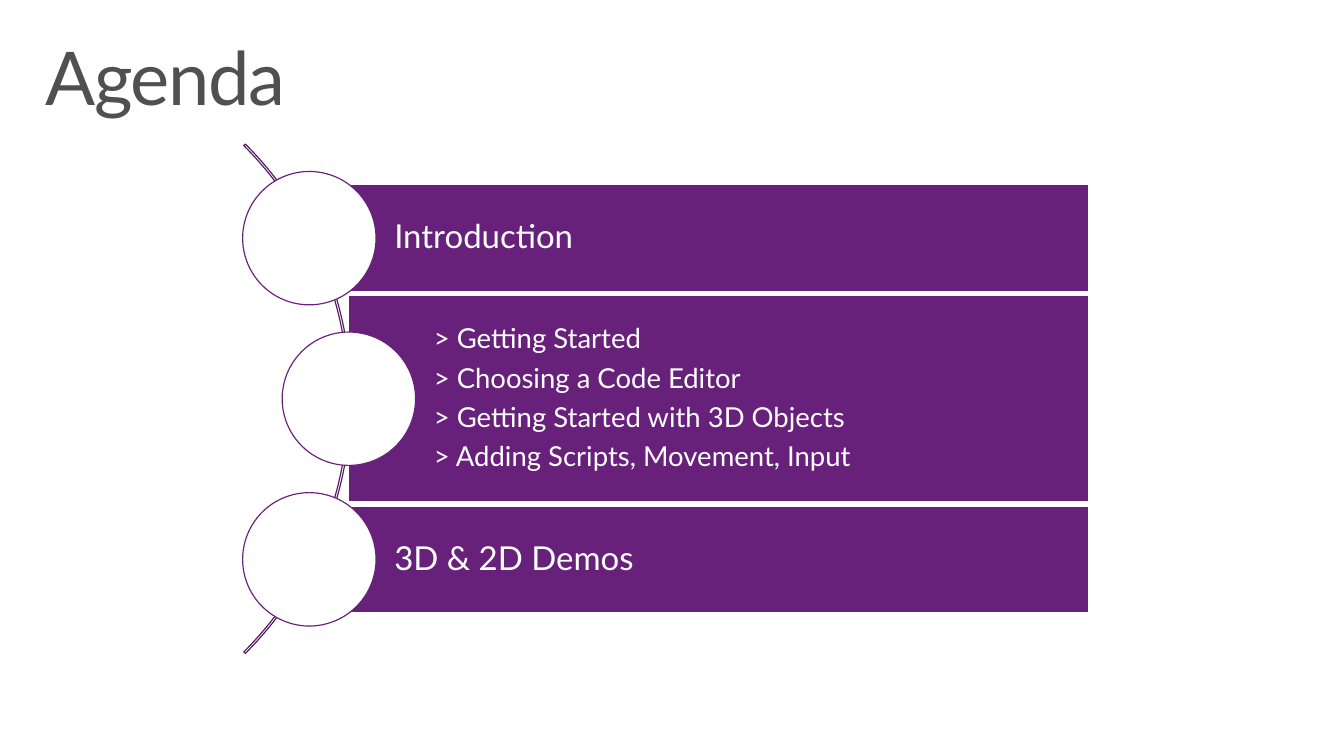
from pptx import Presentation
from pptx.dml.color import RGBColor
from pptx.enum.shapes import MSO_SHAPE as Shape
from pptx.enum.text import MSO_ANCHOR as Anchor, MSO_AUTO_SIZE as AutoSize, PP_ALIGN as Align
from pptx.util import Inches, Pt

HEADING = "Agenda"
TOPICS = [
    {"lines": ["Introduction"], "left": 3.13, "top": 1.87, "height": 1.08, "size": "topic"},
    {"lines": ["> Getting Started", "> Choosing a Code Editor",
               "> Getting Started with 3D Objects", "> Adding Scripts, Movement, Input"],
     "left": 3.53, "top": 2.99, "height": 2.09, "size": "detail"},
    {"lines": ["3D & 2D Demos"], "left": 3.13, "top": 5.12, "height": 1.08, "size": "topic"},
]
THEME = {
    "font": "Lato",
    "purple": RGBColor.from_string("68217A"),
    "arc": RGBColor.from_string("531A62"),
    "white": RGBColor.from_string("FFFFFF"),
    "grey": RGBColor.from_string("505050"),
    "heading": 54, "topic": 24, "detail": 20, "outline": 0.85,
}
BAR_RIGHT = 11.02
CIRCLE = 1.35
ARC = {"left": -3.74, "top": 0.39, "size": 7.29, "adjustments": (189, 27, 0.003)}


def set_all(target, values):
    for key, value in values.items():
        setattr(target, key, value)


def frame_format(left, top, right, bottom, anchor):
    return {"margin_left": Inches(left), "margin_top": Inches(top),
            "margin_right": Inches(right), "margin_bottom": Inches(bottom),
            "vertical_anchor": anchor, "word_wrap": True, "auto_size": AutoSize.NONE}


def write(frame, lines, size, color, space_after=0):
    for index, line in enumerate(lines):
        paragraph = frame.add_paragraph() if index else frame.paragraphs[0]
        set_all(paragraph, {"alignment": Align.LEFT, "line_spacing": 0.9,
                            "space_before": Pt(0), "space_after": Pt(space_after)})
        run = paragraph.add_run()
        run.text = line
        set_all(run.font, {"name": THEME["font"], "size": Pt(size)})
        run.font.color.rgb = color


def draw(slide, kind, box, fill, outline):
    drawn = slide.shapes.add_shape(kind, *map(Inches, box))
    drawn.shadow.inherit = False
    if fill is None:
        drawn.fill.background()
    else:
        drawn.fill.solid()
        drawn.fill.fore_color.rgb = fill
    drawn.line.color.rgb = outline
    drawn.line.width = Pt(THEME["outline"])
    return drawn


def add_heading(slide):
    heading = slide.shapes.title
    set_all(heading, {"left": Inches(0.3), "top": Inches(0.32),
                      "width": Inches(13), "height": Inches(1)})
    set_all(heading.text_frame, frame_format(0.16, 0.1, 0.16, 0.1, Anchor.TOP))
    write(heading.text_frame, [HEADING], THEME["heading"], THEME["grey"])
    heading.text_frame.paragraphs[0].runs[0]._r.get_or_add_rPr().set("spc", "-100")


def add_arc(slide):
    box = (ARC["left"], ARC["top"], ARC["size"], ARC["size"])
    arc = draw(slide, Shape.BLOCK_ARC, box, None, THEME["arc"])
    for index, value in enumerate(ARC["adjustments"]):
        arc.adjustments[index] = value


def add_topic(slide, topic):
    left, top, height = topic["left"], topic["top"], topic["height"]
    size = THEME[topic["size"]]
    bar = draw(slide, Shape.RECTANGLE, (left, top, BAR_RIGHT - left, height),
               THEME["purple"], THEME["white"])
    set_all(bar.text_frame, frame_format(0.86, 0.07, 0.07, 0.07, Anchor.MIDDLE))
    write(bar.text_frame, topic["lines"], size, THEME["white"], size * 0.35)
    circle_top = top + (height - CIRCLE) / 2
    draw(slide, Shape.OVAL, (left - CIRCLE / 2, circle_top, CIRCLE, CIRCLE),
         THEME["white"], THEME["purple"])


def main():
    deck = Presentation()
    set_all(deck, {"slide_width": Inches(13.6), "slide_height": Inches(7.65)})
    slide = deck.slides.add_slide(deck.slide_layouts[5])
    add_heading(slide)
    add_arc(slide)
    for topic in TOPICS:
        add_topic(slide, topic)
    deck.save("out.pptx")


if __name__ == "__main__":
    main()
